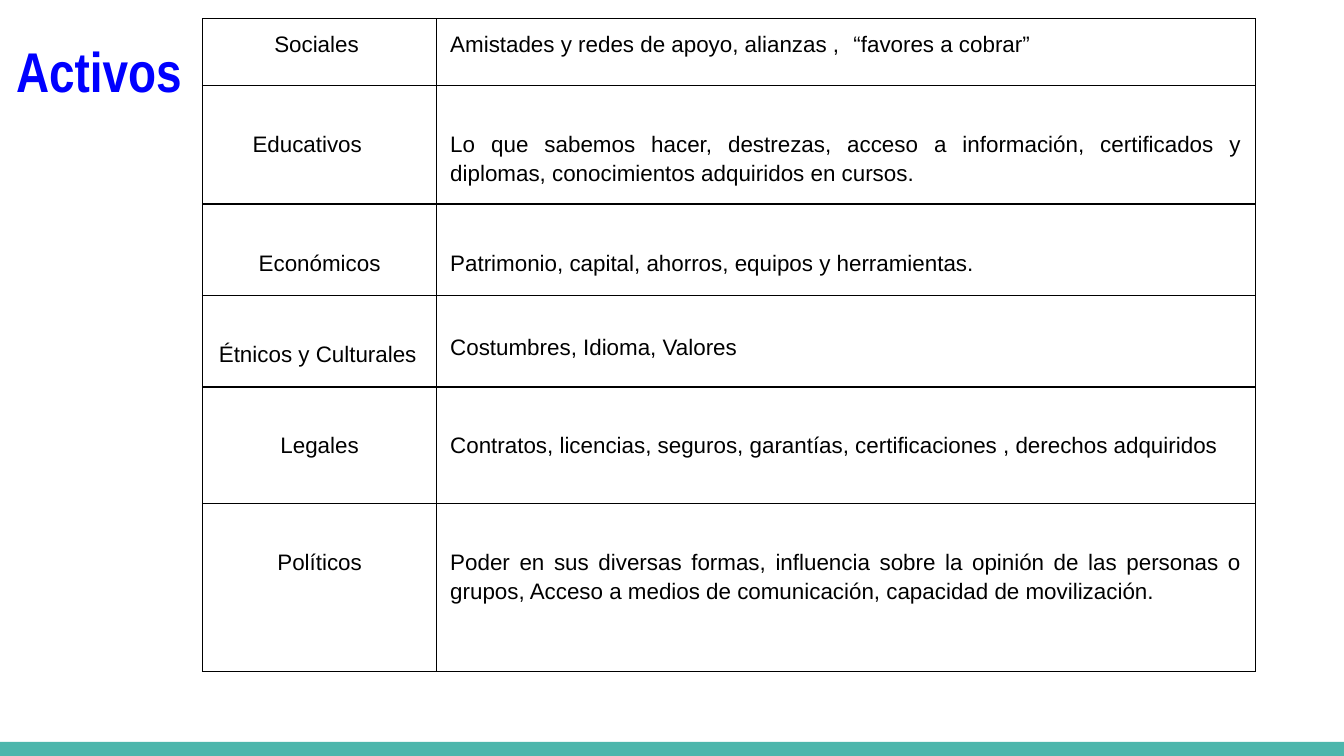
import pptx
import pptx.util
import pptx.dml.color
import pptx.enum.shapes
import pptx.enum.text
import pptx.oxml
import pptx.oxml.ns
from dataclasses import dataclass

Pt = pptx.util.Pt
ALIGN = pptx.enum.text.PP_ALIGN
ANCHOR = pptx.enum.text.MSO_ANCHOR


@dataclass(frozen=True)
class Theme:
    title_color: str = "0000FF"
    text_color: str = "000000"
    border_color: str = "000000"
    bar_color: str = "4DB6AC"
    title_font: str = "Arial Narrow"
    body_font: str = "Arial"
    title_size: int = 30
    body_size: int = 12
    border_width: float = 0.75
    inset: float = 7.2


def rgb(color):
    return pptx.dml.color.RGBColor.from_string(color)


def write(frame, text, *, font, size, color, bold=False, align=ALIGN.LEFT, spacing=1.0):
    paragraph = frame.paragraphs[0]
    paragraph.alignment = align
    paragraph.line_spacing = spacing
    run = paragraph.add_run()
    run.text = text
    run.font.name = font
    run.font.size = Pt(size)
    run.font.bold = bold
    run.font.color.rgb = rgb(color)


class SlideBuilder:
    def __init__(self, slide, theme):
        self.slide = slide
        self.theme = theme

    def bar(self, left, top, width, height):
        bar = self.slide.shapes.add_shape(
            pptx.enum.shapes.MSO_SHAPE.RECTANGLE, Pt(left), Pt(top), Pt(width), Pt(height))
        bar.shadow.inherit = False
        bar.fill.solid()
        bar.fill.fore_color.rgb = rgb(self.theme.bar_color)
        bar.line.fill.background()

    def title(self, text, left, top, width, height):
        frame = self.slide.shapes.add_textbox(
            Pt(left), Pt(top), Pt(width), Pt(height)).text_frame
        frame.word_wrap = True
        frame.vertical_anchor = ANCHOR.MIDDLE
        self.set_insets(frame, self.theme.inset)
        write(frame, text, font=self.theme.title_font, size=self.theme.title_size,
              color=self.theme.title_color, bold=True)

    def set_insets(self, target, top):
        target.margin_left = target.margin_right = target.margin_bottom = Pt(self.theme.inset)
        target.margin_top = Pt(top)

    def table(self, rows, left, top, column_widths, row_heights):
        """Each row holds cells of (text, alignment, top inset, line spacing)."""
        table = self.slide.shapes.add_table(
            len(rows), len(column_widths), Pt(left), Pt(top),
            Pt(sum(column_widths)), Pt(sum(row_heights))).table
        table.first_row = table.horz_banding = False
        for column, width in zip(table.columns, column_widths):
            column.width = Pt(width)
        for row, height, contents in zip(table.rows, row_heights, rows):
            row.height = Pt(height)
            for cell, content in zip(row.cells, contents):
                self.fill_cell(cell, *content)

    def fill_cell(self, cell, text, align, top_inset, spacing):
        self.set_insets(cell, top_inset)
        cell.vertical_anchor = ANCHOR.TOP
        write(cell.text_frame, text, font=self.theme.body_font, size=self.theme.body_size,
              color=self.theme.text_color, align=align, spacing=spacing)
        self.border(cell)
        cell.fill.background()

    def border(self, cell):
        properties = cell._tc.get_or_add_tcPr()
        for side in ("lnL", "lnR", "lnT", "lnB"):
            properties.append(pptx.oxml.parse_xml(
                f'<a:{side} {pptx.oxml.ns.nsdecls("a")} w="{Pt(self.theme.border_width)}">'
                f'<a:solidFill><a:srgbClr val="{self.theme.border_color}"/></a:solidFill>'
                f'</a:{side}>'))


def main():
    deck = pptx.Presentation()
    deck.slide_width, deck.slide_height = Pt(720), Pt(405)
    builder = SlideBuilder(deck.slides.add_slide(deck.slide_layouts[6]), Theme())

    high, low = 21, 23  # top insets that drop the text about one line
    center, left, justify = ALIGN.CENTER, ALIGN.LEFT, ALIGN.JUSTIFY
    inset = builder.theme.inset
    assets = [
        [("Sociales ", center, inset, 1.0),
         ("Amistades y redes de apoyo, alianzas , \t“favores a cobrar”", left, inset, 1.0)],
        [("Educativos\t", center, low, 1.15),
         ("Lo que sabemos hacer, destrezas, acceso a información, certificados y diplomas, "
          "conocimientos adquiridos en cursos.", justify, low, 1.15)],
        [("Económicos", center, low, 1.15),
         ("Patrimonio, capital, ahorros, equipos y herramientas.", justify, low, 1.15)],
        [("Étnicos y Culturales\t", center, low, 1.15),
         ("Costumbres, Idioma, Valores", left, high, 1.0)],
        [("Legales", center, low, 1.15),
         ("Contratos, licencias, seguros, garantías, certificaciones , derechos adquiridos",
          left, low, 1.15)],
        [("Políticos", center, low, 1.15),
         ("Poder en sus diversas formas, influencia sobre la opinión de las personas o grupos, "
          "Acceso a medios de comunicación, capacidad de movilización.", justify, low, 1.15)],
    ]

    builder.bar(0, 397.5, 720, 7.5)
    builder.title("Activos", 1.5, 10, 671, 55.5)
    builder.table(assets, 108.5, 10, [125.5, 438.5], [36, 62.5, 49, 49, 62.5, 90])
    deck.save("out.pptx")


if __name__ == "__main__":
    main()
